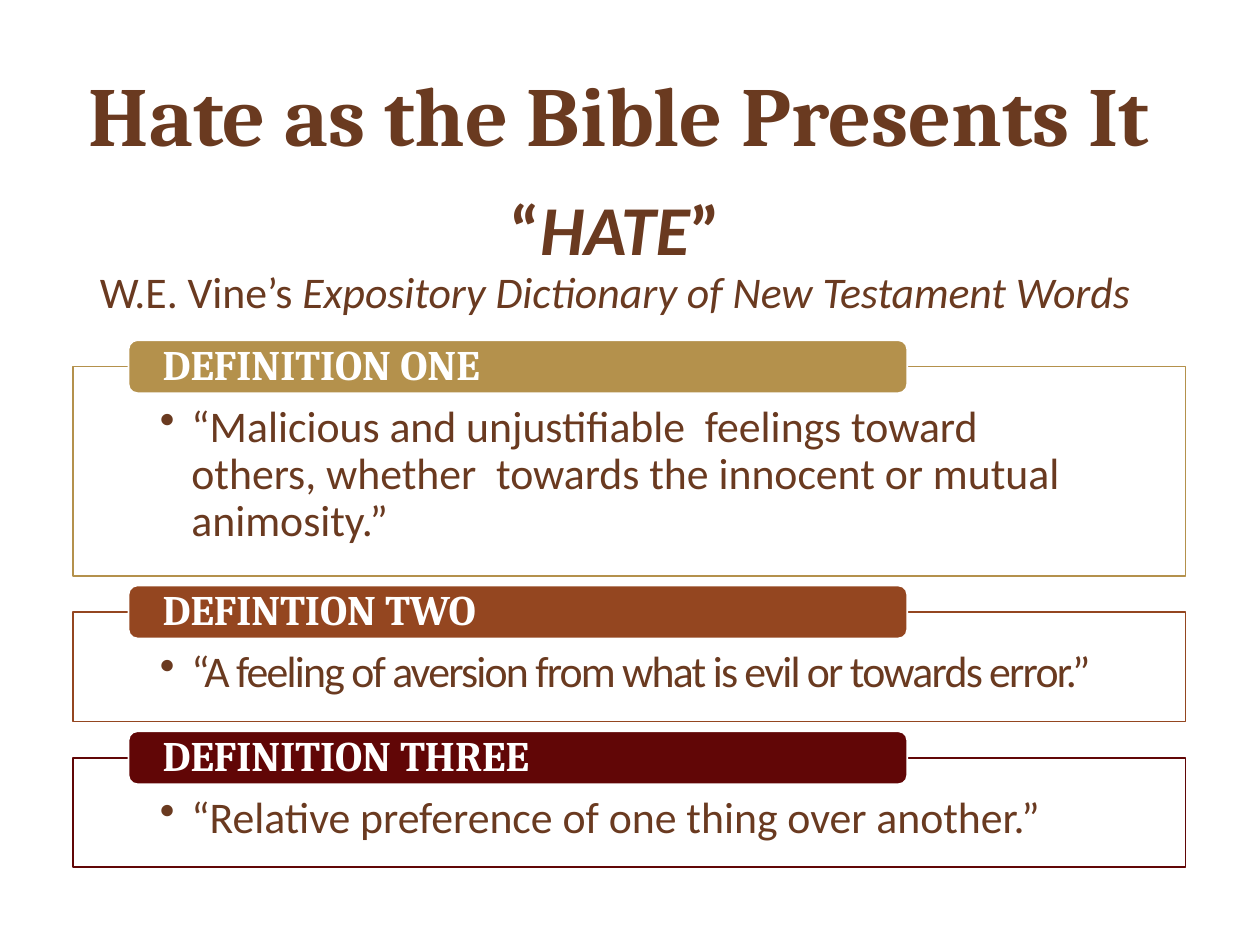
"""Build a slide with three definitions of hate stacked under a title."""
from pptx import Presentation
from pptx.dml.color import RGBColor as Color
from pptx.enum.shapes import MSO_SHAPE as Shape
from pptx.enum.text import MSO_ANCHOR as Anchor, MSO_AUTO_SIZE as AutoSize, PP_ALIGN as Align
from pptx.oxml.ns import qn
from pptx.util import Inches, Pt

THEME = {
    "heading": "Cambria", "text": "Calibri",
    "brown": "6A3A20", "white": "FFFFFF",
    "gold": "B4914C", "rust": "944620", "maroon": "610606",
    "title": 48, "word": 40, "label": 24, "quote": 25,
}

deck = Presentation()
deck.slide_width, deck.slide_height = Inches(10), Inches(7.5)
column, row = deck.slide_width / 100, deck.slide_height / 75
page = deck.slides.add_slide(deck.slide_layouts[1])


def place(box, left, top, width, height, anchor=Anchor.TOP, insets=(1, 0.5, 1, 0.5)):
    """Position a box on the grid and set up its text frame."""
    box.left, box.top = int(left * column), int(top * row)
    box.width, box.height = int(width * column), int(height * row)
    frame = box.text_frame
    frame.word_wrap, frame.auto_size, frame.vertical_anchor = True, AutoSize.NONE, anchor
    frame.margin_left, frame.margin_right = int(insets[0] * column), int(insets[2] * column)
    frame.margin_top, frame.margin_bottom = int(insets[1] * row), int(insets[3] * row)
    return frame


def write(para, text, size, font=THEME["text"], color=THEME["brown"], bold=False, italic=False,
          align=Align.LEFT, spacing=0.9, bullet=None, hang=0, tracking=0):
    """Add one formatted run to a paragraph."""
    para.alignment, para.line_spacing = align, spacing
    para.space_before = para.space_after = Pt(0)
    props = para._p.get_or_add_pPr()
    props.set("marL", str(int(hang * column)))
    props.set("indent", str(int(-hang * column)))
    if props.find(qn("a:buChar")) is None and props.find(qn("a:buNone")) is None:
        mark = props.makeelement(qn("a:buChar" if bullet else "a:buNone"), {"char": bullet} if bullet else {})
        props.append(mark)
    span = para.add_run()
    span.text = text
    span.font.name, span.font.size = font, Pt(size)
    span.font.bold, span.font.italic = bold, italic
    span.font.color.rgb = Color.from_string(color)
    if tracking:
        span.font._element.set("spc", str(tracking * 100))


title = place(page.shapes.title, 5, 4.7, 88.3, 8.6, Anchor.MIDDLE)
write(title.paragraphs[0], "Hate as the Bible Presents It", THEME["title"], THEME["heading"],
      bold=True, align=Align.CENTER, spacing=1)

definitions = [
    ("DEFINITION ONE", "gold", 16.6, 0,
     "“Malicious and unjustifiable  feelings toward others, whether  towards the innocent or mutual animosity.”"),
    ("DEFINTION TWO", "rust", 8.7, -1, "“A feeling of aversion from what is evil or towards error.”"),
    ("DEFINITION THREE", "maroon", 8.7, 0, "“Relative preference of one thing over another.”"),
]
panel_top, panel_gap, label_rise = 29.1, 2.87, 2.1
for label, accent, height, tracking, quote in definitions:
    panel = page.shapes.add_shape(Shape.RECTANGLE, 0, 0, 0, 0)
    tab = page.shapes.add_shape(Shape.ROUNDED_RECTANGLE, 0, 0, 0, 0)
    for box, fill, line in ((panel, "white", accent), (tab, accent, "white")):
        box.shadow.inherit = False
        box.fill.solid()
        box.fill.fore_color.rgb = Color.from_string(THEME[fill])
        box.line.color.rgb = Color.from_string(THEME[line])
        box.line.width = Pt(1)
    body = place(panel, 5.8, panel_top, 88.3, height, insets=(6.9, 3, 6.9, 1.9))
    write(body.paragraphs[0], quote, THEME["quote"], bullet="•", hang=2.5, tracking=tracking)
    head = place(tab, 10.2, panel_top - label_rise, 61.8, 4.2, Anchor.MIDDLE, (2.5, 0, 2.5, 0))
    write(head.paragraphs[0], label, THEME["label"], THEME["heading"], THEME["white"], bold=True)
    panel_top += height + panel_gap

subject = place(page.placeholders[1], 6.7, 15, 84.2, 8.3)
centred = {"align": Align.CENTER, "hang": 2.7}
word = subject.paragraphs[0]
for text, italic in (("“", False), ("HATE", True), ("”", False)):
    write(word, text, THEME["word"], bold=True, italic=italic, **centred)
source = subject.add_paragraph()
for text, italic in (("W.E. Vine’s ", False), ("Expository Dictionary of New Testament Words", True)):
    write(source, text, THEME["quote"], italic=italic, **centred)

deck.save("out.pptx")
